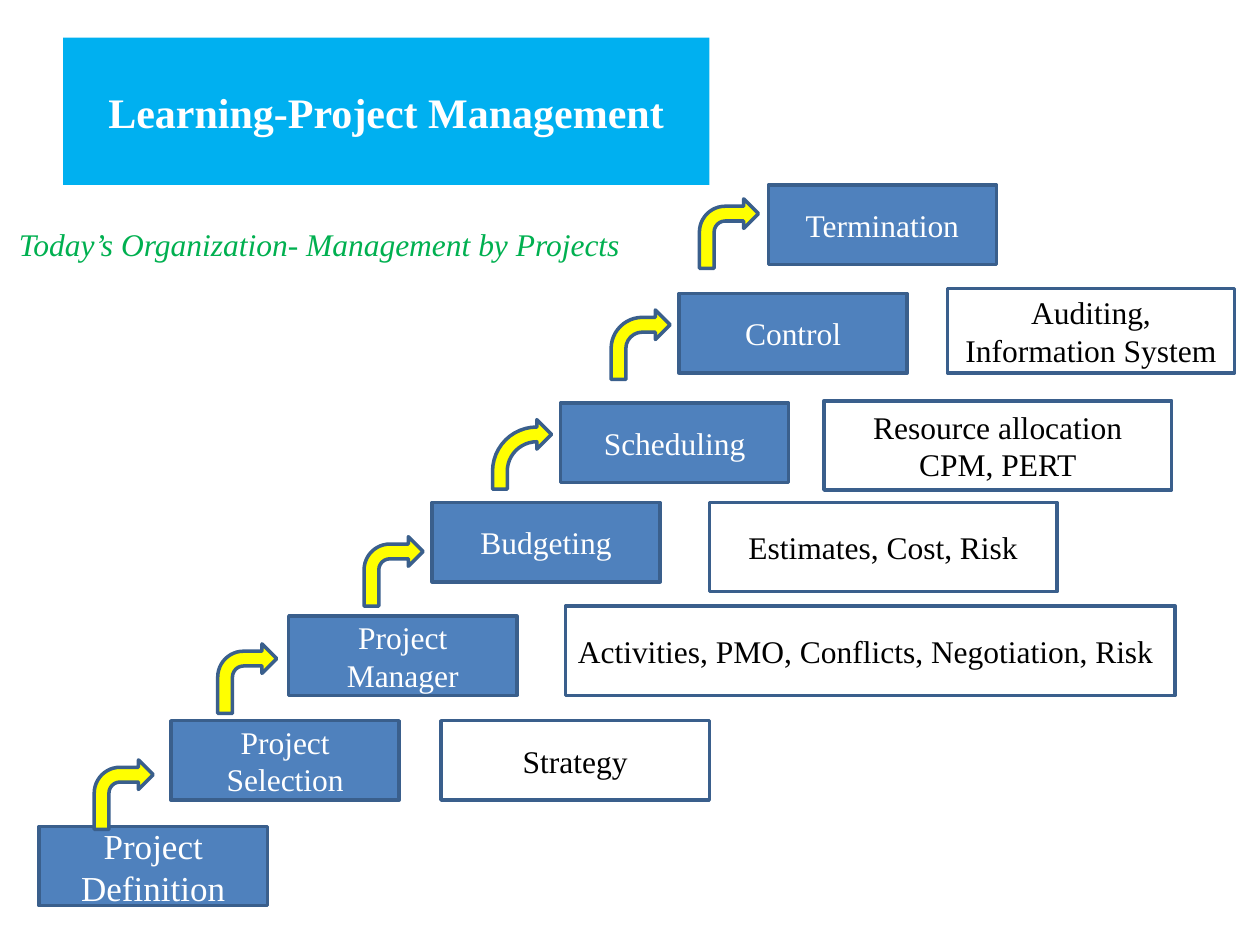
from pptx import Presentation
from pptx.dml.color import RGBColor
from pptx.enum.shapes import MSO_SHAPE
from pptx.enum.text import MSO_ANCHOR, PP_ALIGN
from pptx.util import Cm, Pt

COLORS = {
    "banner": "00B0F0",
    "step": "4F81BD",
    "outline": "3A5F8C",
    "arrow": "FFFF00",
    "tagline": "00B050",
    "white": "FFFFFF",
    "black": "000000",
}
FONT = "Times New Roman"
STEP_SIZE = (4.6, 1.6)
ARROW_SIZE = (1.19, 1.4)

STEPS = [
    {"label": "Project Definition", "at": (0.79, 16.66), "size": 20},
    {"label": "Project Selection", "at": (3.45, 14.53), "arrow": (-1.55, 0.79),
     "note": ("Strategy", (5.44, 0, 5.41, 1.6))},
    {"label": "Project Manager", "at": (5.82, 12.42), "arrow": (-1.43, 0.56),
     "note": ("Activities, PMO, Conflicts, Negotiation, Risk", (5.58, -0.2, 12.29, 1.8)),
     "note_align": PP_ALIGN.LEFT},
    {"label": "Budgeting", "at": (8.71, 10.13), "arrow": (-1.37, 0.69),
     "note": ("Estimates, Cost, Risk", (5.59, 0, 7.01, 1.8))},
    {"label": "Scheduling", "at": (11.3, 8.13), "arrow": (-1.37, 0.33), "bend": 0.75,
     "note": ("Resource allocation CPM, PERT", (5.31, -0.05, 7.01, 1.8))},
    {"label": "Control", "at": (13.69, 5.92), "arrow": (-1.37, 0.33), "bend": 0.53,
     "note": ("Auditing, Information System", (5.41, -0.1, 5.79, 1.7))},
    {"label": "Termination", "at": (15.49, 3.73), "arrow": (-1.39, 0.28)},
]


def rgb(name):
    return RGBColor.from_string(COLORS[name])


def write(part, text, color, size=18, align=PP_ALIGN.CENTER, anchor=MSO_ANCHOR.MIDDLE, **style):
    frame = part.text_frame
    frame.text = text
    frame.word_wrap = True
    frame.vertical_anchor = anchor
    paragraph = frame.paragraphs[0]
    paragraph.alignment = align
    font = paragraph.runs[0].font
    for name, value in {"name": FONT, "size": Pt(size), **style}.items():
        setattr(font, name, value)
    font.color.rgb = rgb(color)


def outlined(slide, preset, box, fill):
    part = slide.shapes.add_shape(preset, *map(Cm, box))
    part.shadow.inherit = False
    part.fill.solid()
    part.fill.fore_color.rgb = rgb(fill)
    part.line.color.rgb = rgb("outline")
    part.line.width = Pt(2)
    return part


def add_banner(slide, box):
    banner = slide.shapes.title
    for name, value in zip(("left", "top", "width", "height"), box):
        setattr(banner, name, Cm(value))
    banner.fill.solid()
    banner.fill.fore_color.rgb = rgb("banner")
    write(banner, "Learning-Project Management", "white", 24, bold=True)


def add_tagline(slide, box):
    tagline = slide.shapes.add_textbox(*map(Cm, box))
    write(tagline, "Today’s Organization- Management by Projects", "tagline",
          align=PP_ALIGN.LEFT, anchor=MSO_ANCHOR.TOP, italic=True)


def add_step(slide, box, step):
    left, top = box[:2]
    stair = outlined(slide, MSO_SHAPE.RECTANGLE, box, "step")
    write(stair, step["label"], "white", step.get("size", 18))
    if "note" in step:
        text, (dx, dy, width, height) = step["note"]
        note = outlined(slide, MSO_SHAPE.RECTANGLE, (left + dx, top + dy, width, height), "white")
        write(note, text, "black", align=step.get("note_align", PP_ALIGN.CENTER))
    if "arrow" in step:
        dx, dy = step["arrow"]
        arrow = outlined(slide, MSO_SHAPE.BENT_ARROW, (left + dx, top + dy, *ARROW_SIZE), "arrow")
        arrow.adjustments[3] = step.get("bend", 0.4375)


def main():
    deck = Presentation()
    deck.slide_width, deck.slide_height = Cm(25.4), Cm(19.05)
    slide = deck.slides.add_slide(deck.slide_layouts[5])
    add_banner(slide, (1.27, 0.76, 13.03, 2.97))
    add_tagline(slide, (0.13, 4.42, 12.7, 1.02))
    for step in STEPS:
        add_step(slide, (*step["at"], *STEP_SIZE), step)
    deck.save("out.pptx")


if __name__ == "__main__":
    main()
